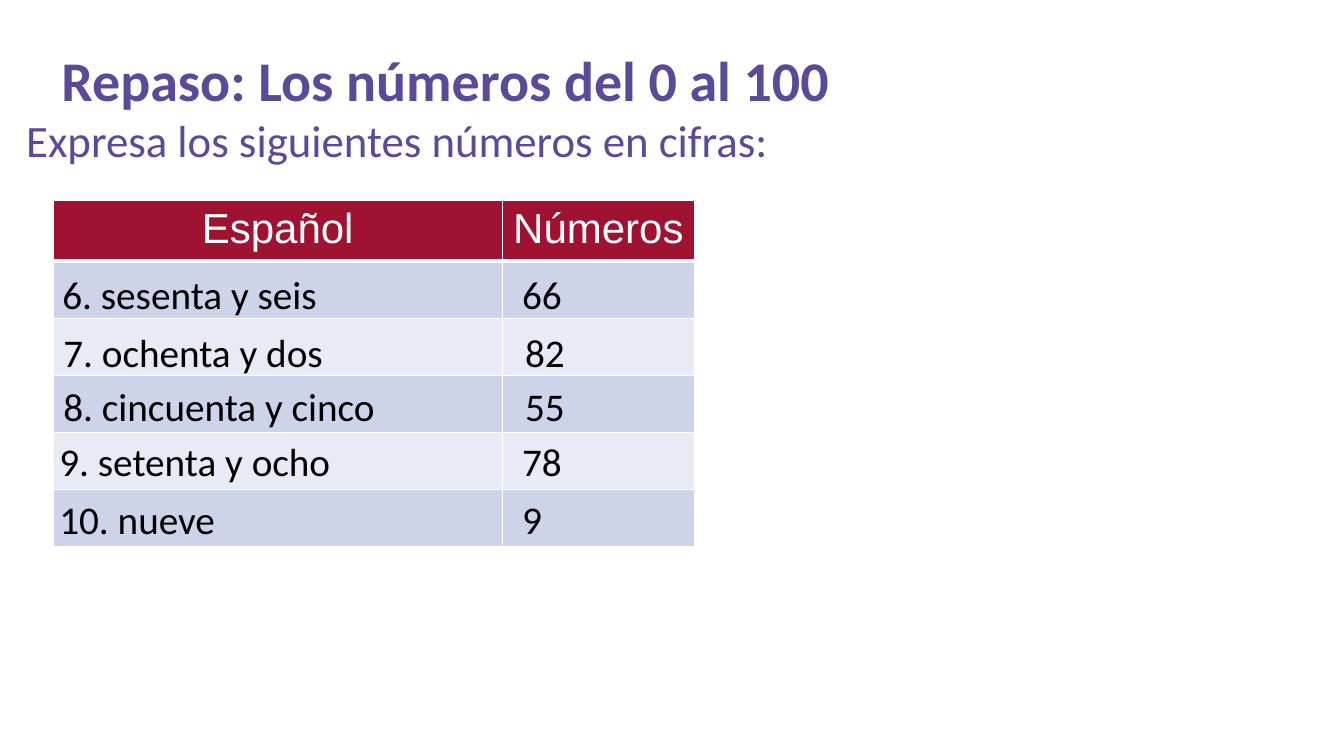
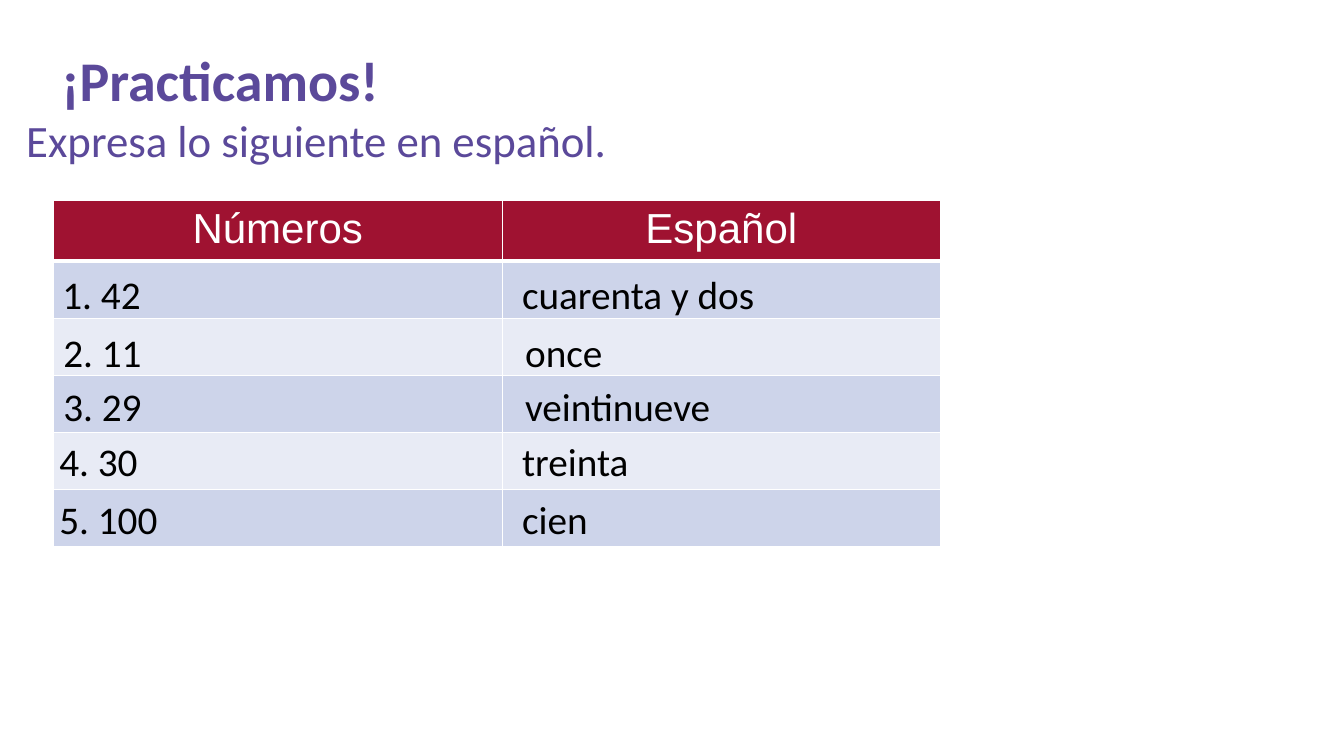
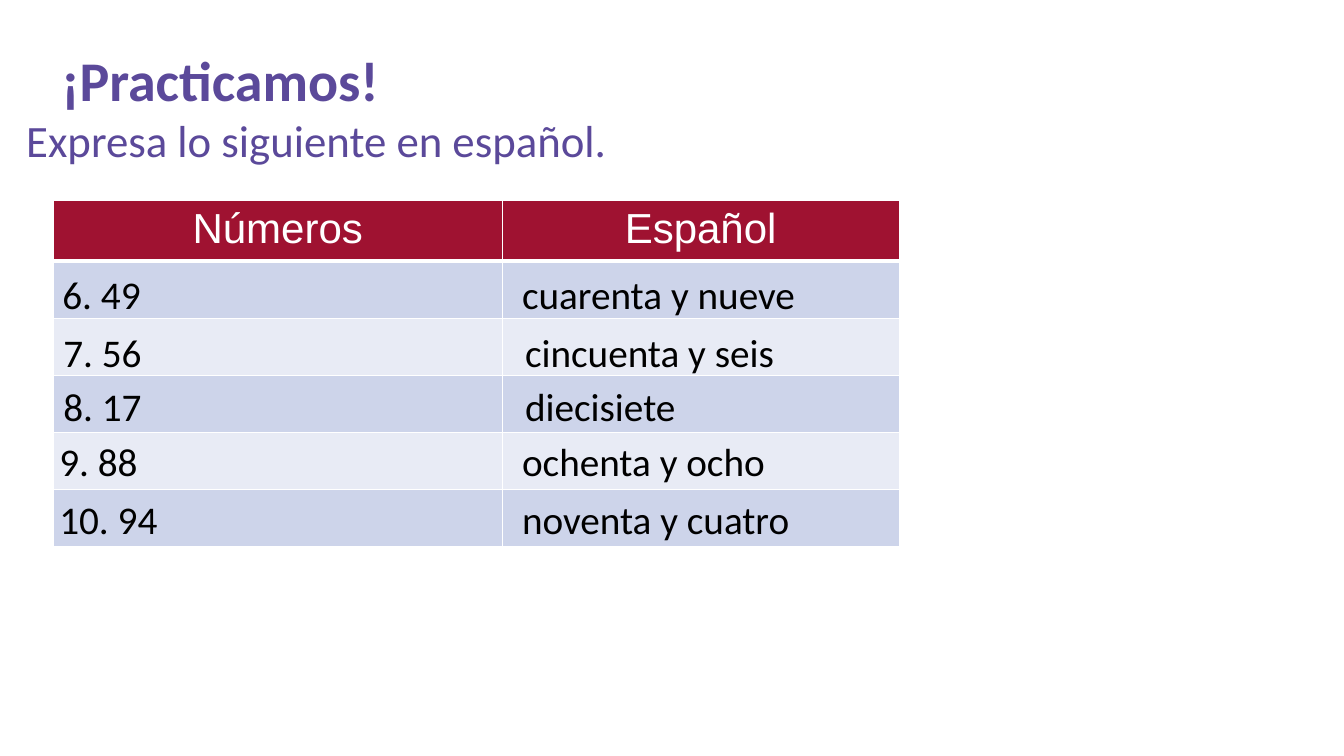
from dataclasses import dataclass

from lxml.etree import SubElement
from pptx import Presentation
from pptx.dml.color import RGBColor
from pptx.enum.text import MSO_ANCHOR, MSO_AUTO_SIZE, PP_ALIGN
from pptx.oxml.ns import qn
from pptx.util import Inches, Pt

COLORS = {
    "heading": "5B499A",
    "header": "9F1231",
    "band_dark": "CDD4EA",
    "band_light": "E8EBF5",
    "border": "FFFFFF",
    "header_text": "FFFFFF",
    "entry": "000000",
}
SLIDE_W, SLIDE_H = 13.33, 7.5
TABLE_LEFT, TABLE_TOP = 0.53, 1.99
PROMPT_W = 4.45
HEADER_H, ROW_H, ROW_COUNT = 0.6, 0.566, 5
THIN, THICK = 0.96, 3


@dataclass(frozen=True)
class RowOffset:
    """Nudge of the entries in one row: from the column edges and the row's top."""
    prompt: float
    answer: float
    top: float


ROW_OFFSETS = (
    RowOffset(-0.01, 0.10, 0.04),
    RowOffset(0, 0.13, 0.05),
    RowOffset(0, 0.13, 0.02),
    RowOffset(-0.04, 0.10, 0),
    RowOffset(-0.04, 0.10, 0.01),
)


@dataclass(frozen=True)
class Exercise:
    title: str
    instruction: str
    headers: tuple[str, str]
    answer_w: float
    first_number: int
    entries: tuple[tuple[str, str], ...]


PRACTICE = ("¡Practicamos!", "Expresa lo siguiente en español.", ("Números", "Español"))
EXERCISES = (
    Exercise(
        "Repaso: Los números del 0 al 100",
        "Expresa los siguientes números en cifras:",
        ("Español", "Números"), 1.91, 6,
        (("sesenta y seis", "66"), ("ochenta y dos", "82"),
         ("cincuenta y cinco", "55"), ("setenta y ocho", "78"), ("nueve", "9")),
    ),
    Exercise(
        *PRACTICE, 4.35, 1,
        (("42", "cuarenta y dos"), ("11", "once"), ("29", "veintinueve"),
         ("30", "treinta"), ("100", "cien")),
    ),
    Exercise(
        *PRACTICE, 3.94, 6,
        (("49", "cuarenta y nueve"), ("56", "cincuenta y seis"), ("17", "diecisiete"),
         ("88", "ochenta y ocho"), ("94", "noventa y cuatro")),
    ),
)


def add_text(frame, text: str, size: float, color: str, font: str = "Calibri",
             bold: bool = False, align=PP_ALIGN.LEFT) -> None:
    paragraph = frame.paragraphs[0]
    paragraph.alignment = align
    paragraph.space_before = Pt(0)
    run = paragraph.add_run()
    run.text = text
    run.font.name, run.font.size, run.font.bold = font, Pt(size), bold
    run.font.color.rgb = RGBColor.from_string(COLORS[color])


def fill_placeholder(holder, box: tuple[float, ...], text: str, size: float,
                     bold: bool = False) -> None:
    holder.left, holder.top, holder.width, holder.height = map(Inches, box)
    frame = holder.text_frame
    frame.auto_size = MSO_AUTO_SIZE.NONE
    frame.vertical_anchor = MSO_ANCHOR.TOP
    properties = frame.paragraphs[0]._p.get_or_add_pPr()
    properties.set("marL", "0")
    properties.set("indent", "0")
    SubElement(properties, qn("a:buNone"))
    add_text(frame, text, size, "heading", bold=bold)


def style_cell(cell, fill: str, top: float, bottom: float) -> None:
    """Give the cell its borders, then its fill, in the order the schema asks for."""
    properties = cell._tc.get_or_add_tcPr()
    for side, width in (("L", THIN), ("R", THIN), ("T", top), ("B", bottom)):
        line = SubElement(properties, qn(f"a:ln{side}"), w=str(Pt(width)))
        solid = SubElement(line, qn("a:solidFill"))
        SubElement(solid, qn("a:srgbClr"), val=COLORS["border"])
    cell.fill.solid()
    cell.fill.fore_color.rgb = RGBColor.from_string(COLORS[fill])
    cell.margin_left = cell.margin_right = Inches(0.08)


def add_number_table(slide, exercise: Exercise) -> None:
    widths = (PROMPT_W, exercise.answer_w)
    table = slide.shapes.add_table(
        ROW_COUNT + 1, len(widths), Inches(TABLE_LEFT), Inches(TABLE_TOP),
        Inches(sum(widths)), Inches(HEADER_H + ROW_COUNT * ROW_H)).table
    table.horz_banding = False
    for column, width in zip(table.columns, widths):
        column.width = Inches(width)
    for index, row in enumerate(table.rows):
        row.height = Inches(ROW_H if index else HEADER_H)
        fill = ("band_dark" if index % 2 else "band_light") if index else "header"
        for cell in row.cells:
            style_cell(cell, fill, THICK if index == 1 else THIN, THIN if index else THICK)
    for cell, header in zip(table.rows[0].cells, exercise.headers):
        add_text(cell.text_frame, header, 30, "header_text", "Arial", align=PP_ALIGN.CENTER)


def add_entry(slide, left: float, top: float, width: float, text: str) -> None:
    entry = slide.shapes.add_textbox(Inches(left), Inches(top), Inches(width), Inches(0.56))
    entry.text_frame.word_wrap = True
    add_text(entry.text_frame, text, 28, "entry")


def add_exercise(deck, exercise: Exercise) -> None:
    slide = deck.slides.add_slide(deck.slide_layouts[1])
    title, instruction = slide.placeholders
    fill_placeholder(title, (0.51, 0.4, 11.5, 0.68), exercise.title, 40, bold=True)
    fill_placeholder(instruction, (0.16, 1.07, 13.01, 1.23), exercise.instruction, 32)
    add_number_table(slide, exercise)
    for row, ((prompt, answer), offset) in enumerate(zip(exercise.entries, ROW_OFFSETS)):
        top = TABLE_TOP + HEADER_H + row * ROW_H + offset.top
        add_entry(slide, TABLE_LEFT + offset.prompt, top, PROMPT_W,
                  f"{exercise.first_number + row}. {prompt}")
        add_entry(slide, TABLE_LEFT + PROMPT_W + offset.answer, top, exercise.answer_w, answer)


def main() -> None:
    deck = Presentation()
    deck.slide_width, deck.slide_height = Inches(SLIDE_W), Inches(SLIDE_H)
    for exercise in EXERCISES:
        add_exercise(deck, exercise)
    deck.save("out.pptx")


if __name__ == "__main__":
    main()
